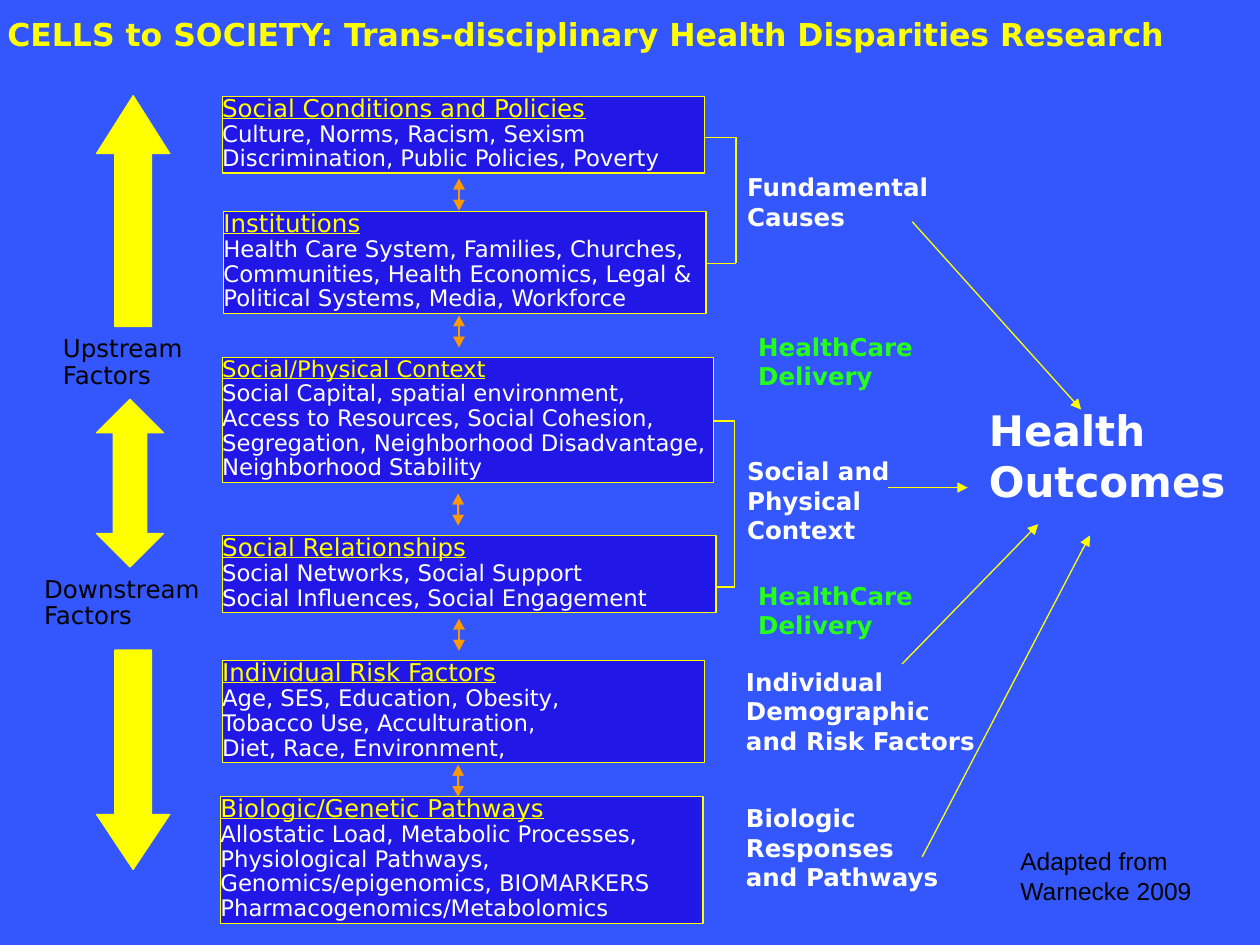
from lxml.etree import SubElement
from pptx import Presentation
from pptx.dml.color import RGBColor
from pptx.enum.shapes import MSO_CONNECTOR, MSO_SHAPE
from pptx.enum.text import MSO_ANCHOR, PP_ALIGN
from pptx.oxml.ns import qn
from pptx.util import Pt

BLUE, NAVY, YELLOW, ORANGE = "3357FC", "2117E7", "FFFF00", "FF9900"
WHITE, BLACK, GREEN = "FFFFFF", "000000", "25FF19"
SANS = "DejaVu Sans"

FACTORS = [
    ((127, 55, 275.8, 44), 14, "Social Conditions and Policies",
     ["Culture, Norms, Racism, Sexism\nDiscrimination, Public Policies, Poverty"]),
    ((127.7, 120.7, 275.8, 58.3), 14, "Institutions",
     ["Health Care System, Families, Churches, \nCommunities, Health Economics, Legal &\n"
      "Political Systems, Media, Workforce"]),
    ((127, 204.3, 280.8, 71.3), 13, "Social/Physical Context",
     ["Social Capital, spatial environment,\nAccess to Resources, Social Cohesion,",
      "Segregation, Neighborhood Disadvantage, \nNeighborhood Stability"]),
    ((127, 306, 282.2, 44), 14, "Social Relationships",
     ["Social Networks, Social Support\nSocial Influences, Social Engagement"]),
    ((127, 377.5, 275.8, 58.3), 14, "Individual Risk Factors",
     ["Age, SES, Education, Obesity, \nTobacco Use, Acculturation, \nDiet, Race, Environment,"]),
    ((126, 455, 275.8, 72.7), 14, "Biologic/Genetic Pathways",
     ["Allostatic Load, Metabolic Processes, \nPhysiological Pathways, "
      "Genomics/epigenomics, BIOMARKERS", "Pharmacogenomics/Metabolomics"]),
]
EXCHANGES = [(262.3, 102.2), (262.3, 180.4), (261.8, 282.2), (262.3, 353.7), (261.8, 437.2)]
LABELS = [
    ((-2.9, 5, 685.4, 28.8), ["CELLS to SOCIETY: Trans-disciplinary Health Disparities Research"],
     18, YELLOW, True),
    ((419.8, 95, 137.5, 26), ["Fundamental", "Causes"], 14, WHITE, True),
    ((419.8, 257.2, 95.8, 42.5), ["Social and Physical Context"], 14, WHITE, True),
    ((419.2, 377.6, 149.8, 33.8), ["Individual Demographic and Risk Factors"], 14, WHITE, True),
    ((419.2, 455.4, 144, 42.5), ["Biologic Responses", "and Pathways"], 14, WHITE, True),
    ((426.2, 186.1, 137.5, 26), ["HealthCare Delivery"], 14, GREEN, True),
    ((426.2, 328.3, 137.5, 26), ["HealthCare Delivery"], 14, GREEN, True),
    ((558, 227.8, 167, 64), ["Health Outcomes"], 24, WHITE, True),
]
DIRECTIONS = [
    ((36, 192.2, 88, 30.2), "Upstream\nFactors"),
    ((25.2, 329.8, 98, 30.2), "Downstream\nFactors"),
]
SOURCE = ((576, 480.2, 131.8, 41), "Adapted from Warnecke 2009")
BIG_ARROWS = [
    (MSO_SHAPE.DOWN_ARROW, (55.2, 371.5, 41.8, 125.3), 0, 0.75),
    (MSO_SHAPE.DOWN_ARROW, (55.2, 54.7, 41.8, 131.8), 180, 0.79),
    (MSO_SHAPE.UP_DOWN_ARROW, (55.2, 228.2, 38.2, 95.8), 0, 0.5),
]
OUTCOME_ARROWS = [
    (521.3, 126.7, 617.8, 234), (507.6, 278.6, 553, 278.6),
    (515.5, 379.4, 593.3, 299.5), (527, 489.6, 622.8, 306),
]
BRACKETS = [(384.5, 420.5, 78.5, 150.5), (383.8, 419.8, 240.5, 335.5)]


def rgb(value):
    return RGBColor.from_string(value)


def paint(shape, fill, line, width):
    shape.shadow.inherit = False
    shape.fill.solid()
    shape.fill.fore_color.rgb = rgb(fill)
    shape.line.color.rgb = rgb(line)
    shape.line.width = Pt(width)


def prepare(frame, inset):
    frame.word_wrap = True
    frame.vertical_anchor = MSO_ANCHOR.TOP
    if not inset:
        frame.margin_left = frame.margin_right = frame.margin_top = frame.margin_bottom = 0


def write(frame, texts, size, color, bold=False, font=SANS, underline=False, spacing=None):
    for text in texts:
        paragraph = frame.paragraphs[0] if not frame.text else frame.add_paragraph()
        paragraph.alignment = PP_ALIGN.LEFT
        paragraph.line_spacing = spacing
        for index, line in enumerate(text.split("\n")):
            if index:
                paragraph.add_line_break()
            run = paragraph.add_run()
            run.text = line
            run.font.size, run.font.name = Pt(size), font
            run.font.bold, run.font.underline = bold, underline
            run.font.color.rgb = rgb(color)


def add_label(shapes, box, texts, size, color, bold=False, font=SANS, inset=True, spacing=None):
    frame = shapes.add_textbox(*map(Pt, box)).text_frame
    prepare(frame, inset)
    write(frame, texts, size, color, bold, font, spacing=spacing)


def add_line(shapes, ends, arrow=False):
    line = shapes.add_connector(MSO_CONNECTOR.STRAIGHT, *map(Pt, ends))
    line.line.color.rgb = rgb(YELLOW)
    line.line.width = Pt(0.75)
    properties = line._element.spPr
    if arrow:
        SubElement(properties.get_or_add_ln(), qn("a:tailEnd"), type="triangle")
    SubElement(properties, qn("a:effectLst"))


def add_exchange(shapes, center, top):
    head, half, shaft, height = 6, 3.25, 0.5, 18
    right = [(half, head), (shaft, head), (shaft, height - head), (half, height - head)]
    left = [(-x, y) for x, y in reversed(right)]
    outline = [(Pt(center + x), Pt(top + y)) for x, y in right + [(0, height)] + left]
    builder = shapes.build_freeform(Pt(center), Pt(top))
    builder.add_line_segments(outline, close=True)
    paint(builder.convert_to_shape(), ORANGE, ORANGE, 0.05)


def main():
    """Build the cells to society slide."""
    deck = Presentation()
    deck.slide_width, deck.slide_height = Pt(720), Pt(540)
    slide = deck.slides.add_slide(deck.slide_layouts[6])
    slide.background.fill.solid()
    slide.background.fill.fore_color.rgb = rgb(BLUE)
    shapes = slide.shapes

    for left, right, top, bottom in BRACKETS:
        for ends in ((left, top, right, top), (left, bottom, right, bottom),
                     (right, top, right, bottom)):
            add_line(shapes, ends)
    for box, size, heading, body in FACTORS:
        factor = shapes.add_shape(MSO_SHAPE.RECTANGLE, *map(Pt, box))
        paint(factor, NAVY, YELLOW, 0.75)
        prepare(factor.text_frame, False)
        write(factor.text_frame, [heading], size, YELLOW, underline=True, spacing=0.9)
        write(factor.text_frame, body, 13, WHITE, spacing=0.9)
    for center, top in EXCHANGES:
        add_exchange(shapes, center, top)
    for kind, box, rotation, head in BIG_ARROWS:
        arrow = shapes.add_shape(kind, *map(Pt, box))
        arrow.rotation = rotation
        arrow.adjustments[0], arrow.adjustments[1] = 0.5, head
        paint(arrow, YELLOW, YELLOW, 0.75)
    for ends in OUTCOME_ARROWS:
        add_line(shapes, ends, arrow=True)
    for label in LABELS:
        add_label(shapes, *label)
    for box, text in DIRECTIONS:
        add_label(shapes, box, [text], 14, BLACK, inset=False, spacing=0.9)
    source_box, source_text = SOURCE
    add_label(shapes, source_box, [source_text], 14, BLACK, font="Arial")
    deck.save("out.pptx")


if __name__ == "__main__":
    main()
